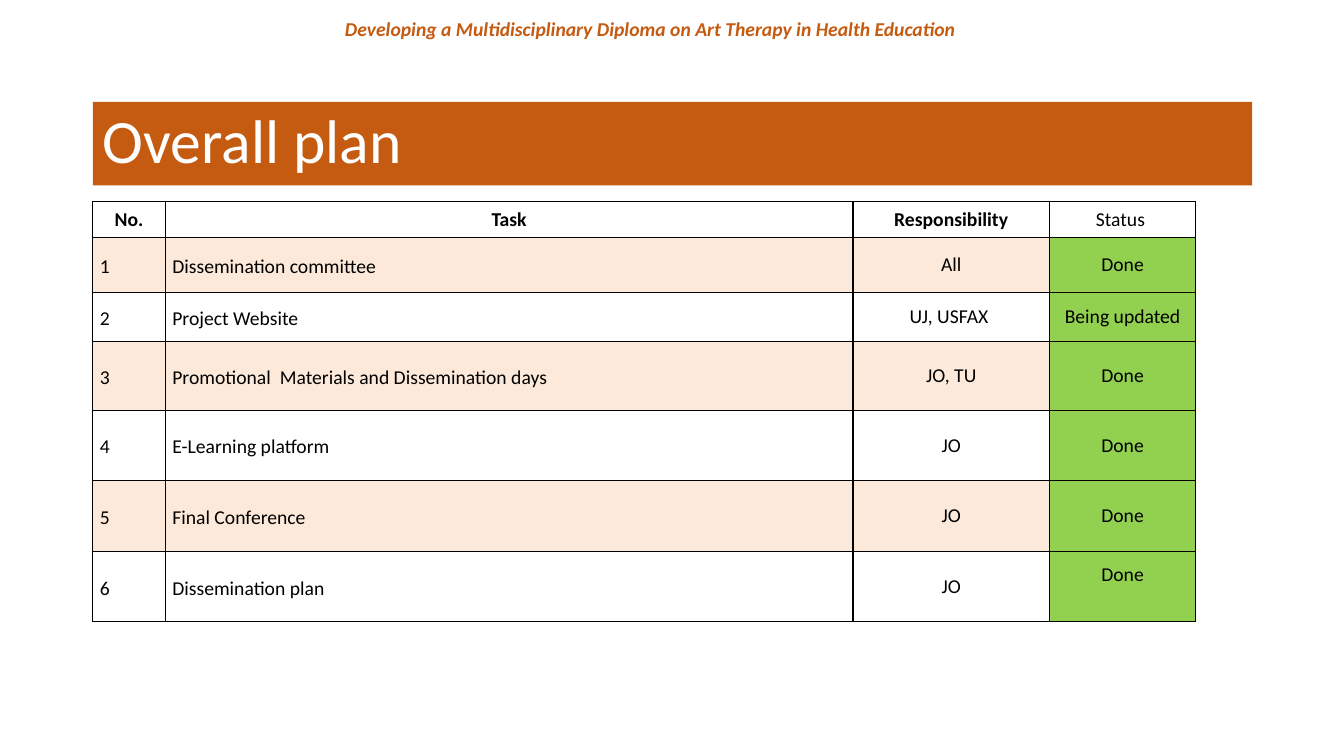
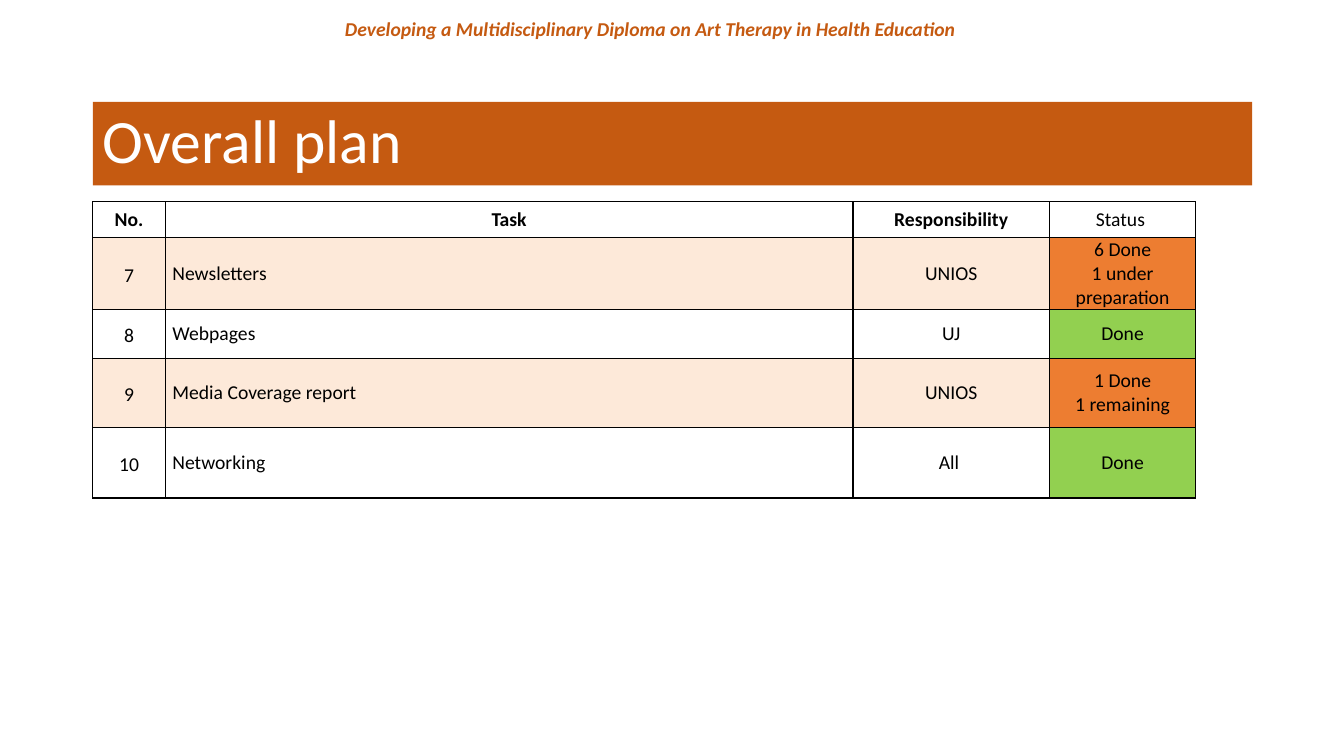
from lxml.etree import SubElement
from pptx import Presentation
from pptx.dml.color import RGBColor
from pptx.enum.text import MSO_ANCHOR as Anchor, MSO_AUTO_SIZE as AutoSize, PP_ALIGN as Align
from pptx.oxml.ns import qn
from pptx.util import Inches, Pt

FONT = "Calibri"
RUST, BLACK, WHITE = "C55A11", "000000", "FFFFFF"
PEACH, GREEN, ORANGE = "FDE9D9", "92D050", "ED7D31"
HEADER = "Developing a Multidisciplinary Diploma on Art Therapy in Health Education "
HEADER_BOX = (3.14, 0.12, 6.67, 0.34)
TITLE_BOX = (0.92, 1.01, 11.5, 0.83)
TABLE_LEFT, TABLE_TOP = 0.92, 2
COLUMNS = (
    ("No.", 0.72),
    ("Task", 6.82),
    ("Responsibility", 1.95),
    ("Status ", 1.45),
)
HEAD_HEIGHT = 0.36
LINE_GAP = 0.24

FIRST_TASKS = [
    ("1", "Dissemination committee", "All", "Done", GREEN, 0.54),
    ("2", "Project Website", "UJ, USFAX ", "Being updated", GREEN, 0.49),
    ("3", "Promotional  Materials and Dissemination days", "JO, TU", "Done", GREEN, 0.68),
    ("4", "E-Learning platform", "JO", "Done", GREEN, 0.7),
    ("5", "Final Conference", "JO", "Done", GREEN, 0.7),
    ("6", "Dissemination plan", "JO", "Done", GREEN, 0.7),
]
LAST_TASKS = [
    ("7", "Newsletters", "UNIOS", "6 Done\n1 under preparation", ORANGE, 0.68),
    ("8", "Webpages", "UJ", "Done", GREEN, 0.49),
    ("9", "Media Coverage report", "UNIOS", "1 Done\n1 remaining", ORANGE, 0.68),
    ("10", "Networking", "All ", "Done", GREEN, 0.7),
]


def color(value):
    return RGBColor.from_string(value)


def paint(target, value):
    target.fill.solid()
    target.fill.fore_color.rgb = color(value)


def style(para, size, value, align, bold=False, italic=False):
    para.alignment = align
    font = para.font
    font.name, font.size = FONT, Pt(size)
    font.bold, font.italic = bold, italic
    font.color.rgb = color(value)


def add_header(layout, page, box):
    header = page.shapes.add_textbox(*map(Inches, box))
    frame = header.text_frame
    frame.word_wrap = True
    frame.text = HEADER
    style(frame.paragraphs[0], 14, RUST, Align.CENTER, bold=True, italic=True)
    layout.shapes.element.append(header.element)


def set_title(page, text, box):
    title = page.shapes.title
    title.left, title.top, title.width, title.height = map(Inches, box)
    paint(title, RUST)
    frame = title.text_frame
    frame.auto_size = AutoSize.NONE
    frame.vertical_anchor = Anchor.MIDDLE
    frame.text = text
    para = frame.paragraphs[0]
    para.line_spacing = 0.9
    style(para, 44, WHITE, Align.LEFT)


def add_borders(cell):
    properties = cell._tc.get_or_add_tcPr()
    for side in ("a:lnL", "a:lnR", "a:lnT", "a:lnB"):
        line = SubElement(properties, qn(side), w=str(Pt(1)))
        fill = SubElement(line, qn("a:solidFill"))
        SubElement(fill, qn("a:srgbClr"), val=BLACK)


def fill_cell(cell, text, fill, align=Align.CENTER, bold=False, spaced=False):
    add_borders(cell)
    paint(cell, fill)
    cell.vertical_anchor = Anchor.MIDDLE
    cell.margin_left = cell.margin_right = Inches(0.07)
    cell.margin_top = cell.margin_bottom = 0
    cell.text_frame.text = text
    for para in cell.text_frame.paragraphs:
        if spaced:
            para.line_spacing = 1.15
            para.space_after = Pt(10)
        style(para, 14, BLACK, align, bold)


def add_task_table(page, tasks, left, top, number_align, task_align, task_spaced):
    heights = [HEAD_HEIGHT] + [task[-1] for task in tasks]
    widths = [width for _, width in COLUMNS]
    table = page.shapes.add_table(
        len(heights), len(widths), Inches(left), Inches(top),
        Inches(sum(widths)), Inches(sum(heights)),
    ).table
    table.first_row = table.horz_banding = False
    for row, height in zip(table.rows, heights):
        row.height = Inches(height)
    for index, (label, width) in enumerate(COLUMNS):
        table.columns[index].width = Inches(width)
        fill_cell(table.cell(0, index), label, WHITE, bold=index < len(COLUMNS) - 1)
    for index, (number, task, owner, status, status_fill, _) in enumerate(tasks, 1):
        band = PEACH if index % 2 else WHITE
        fill_cell(table.cell(index, 0), number, band, number_align, spaced=True)
        fill_cell(table.cell(index, 1), task, band, task_align, spaced=task_spaced)
        fill_cell(table.cell(index, 2), owner, band)
        fill_cell(table.cell(index, 3), status, status_fill)
    return table


def add_plan_page(deck, layout, tasks, number_align, task_align, task_spaced):
    page = deck.slides.add_slide(layout)
    set_title(page, "Overall plan", TITLE_BOX)
    table = add_task_table(
        page, tasks, TABLE_LEFT, TABLE_TOP, number_align, task_align, task_spaced
    )
    return page, table


def main():
    deck = Presentation()
    deck.slide_width, deck.slide_height = Inches(13.33), Inches(7.5)
    layout = deck.slide_layouts[5]
    page, table = add_plan_page(deck, layout, FIRST_TASKS, Align.LEFT, Align.LEFT, True)
    table.cell(len(FIRST_TASKS), 3).margin_bottom = Inches(LINE_GAP)
    add_header(layout, page, HEADER_BOX)
    add_plan_page(deck, layout, LAST_TASKS, Align.CENTER, Align.JUSTIFY, False)
    deck.save("out.pptx")


if __name__ == "__main__":
    main()
